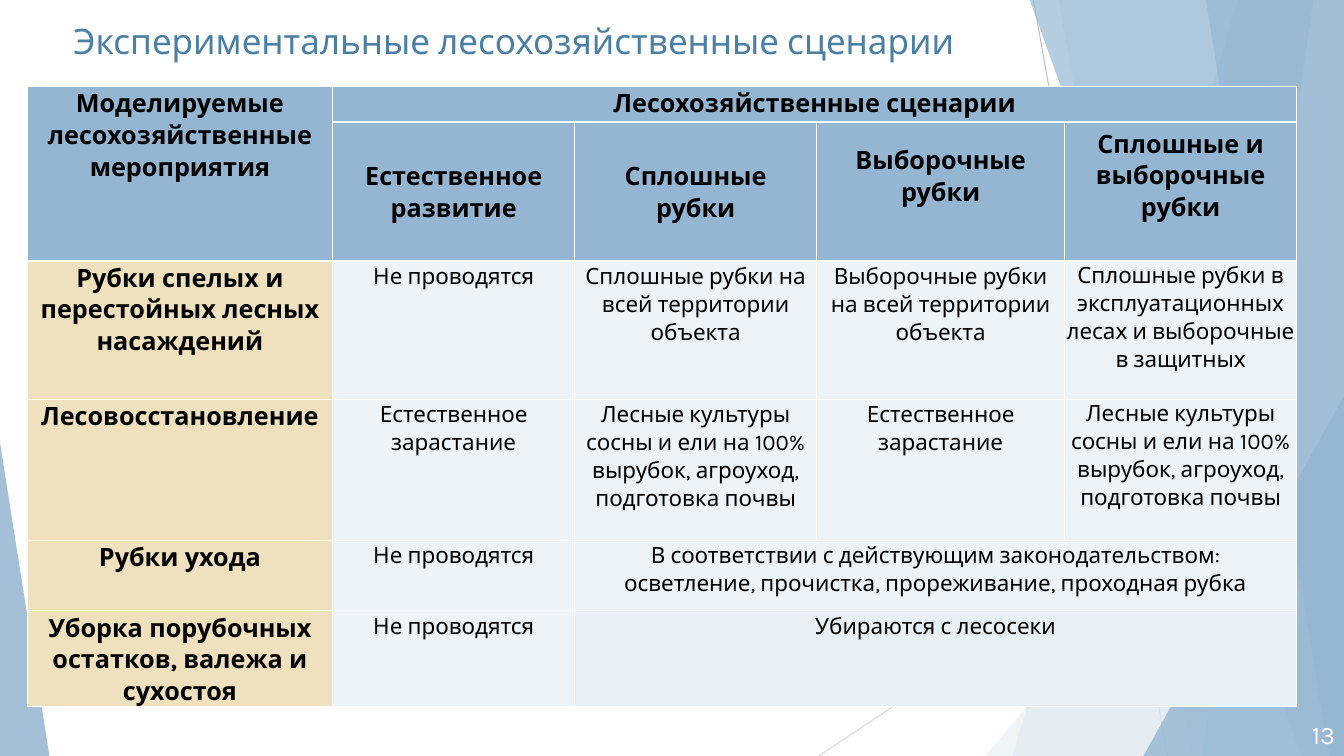
from lxml.etree import SubElement
from pptx import Presentation
from pptx.dml.color import RGBColor
from pptx.enum.shapes import MSO_CONNECTOR, MSO_SHAPE
from pptx.enum.text import MSO_ANCHOR, PP_ALIGN
from pptx.oxml.ns import qn
from pptx.util import Inches, Pt

WIDTH, HEIGHT = 13.33, 7.5
FONT = "Karla"
COLORS = {
    "blue": "94B6D2", "steel": "97B8D0", "sky": "BFD3E4", "ice": "E9F0F5",
    "body": "EEF3F7", "sand": "EFE0BE", "title": "4B7FA4",
    "black": "000000", "white": "FFFFFF", "gray": "BFBFBF", "silver": "D9D9D9",
}

COLUMN_WIDTHS = [3.03, 2.4, 2.4, 2.46, 2.3]
ROW_HEIGHTS = [0.35, 1.38, 1.37, 1.4, 0.7, 0.83]
CULTURES = "Лесные культуры сосны и ели на 100% вырубок, агроуход, подготовка почвы"
ROWS = [
    ["Моделируемые лесохозяйственные мероприятия", "Лесохозяйственные сценарии"],
    ["", "Естественное развитие", "Сплошные\nрубки", "Выборочные рубки",
     "Сплошные и выборочные рубки"],
    ["Рубки спелых и перестойных лесных насаждений", "Не проводятся",
     "Сплошные рубки на всей территории объекта",
     "Выборочные рубки на всей территории объекта",
     "Сплошные рубки в эксплуатационных лесах и выборочные в защитных"],
    ["Лесовосстановление", "Естественное зарастание", CULTURES,
     "Естественное зарастание", CULTURES],
    ["Рубки ухода", "Не проводятся",
     "В соответствии с действующим законодательством:\n"
     "осветление, прочистка, прореживание, проходная рубка"],
    ["Уборка порубочных остатков, валежа и сухостоя", "Не проводятся",
     "Убираются с лесосеки"],
]
# First and last cell of each merged block, as (row, column)
MERGES = [((0, 0), (1, 0)), ((0, 1), (0, 4)), ((4, 2), (4, 4)), ((5, 2), (5, 4))]


def rgb(name):
    return RGBColor.from_string(COLORS[name])


def paint(shape, color, opacity):
    shape.shadow.inherit = False
    shape.fill.solid()
    shape.fill.fore_color.rgb = rgb(color)
    shape.line.fill.background()
    fill_color = shape._element.spPr.find(qn("a:solidFill"))[0]
    SubElement(fill_color, qn("a:alpha"), val=str(opacity * 1000))


def add_line(slide, start, end, color):
    points = [Inches(value) for value in (*start, *end)]
    line = slide.shapes.add_connector(MSO_CONNECTOR.STRAIGHT, *points)
    line.line.color.rgb = rgb(color)
    line.line.width = Pt(0.75)
    SubElement(line._element.spPr, qn("a:effectLst"))


def add_band(slide, top_x, bottom_x, color, opacity):
    """Band from a slanted left edge to the right edge of the slide."""
    corners = [(WIDTH, -0.01), (WIDTH, HEIGHT), (bottom_x, HEIGHT)]
    builder = slide.shapes.build_freeform(Inches(top_x), Inches(-0.01))
    builder.add_line_segments([(Inches(x), Inches(y)) for x, y in corners])
    paint(builder.convert_to_shape(), color, opacity)


def add_triangle(slide, left, top, width, apex, color, opacity):
    """Triangle that stands on the bottom edge of the slide."""
    shape = slide.shapes.add_shape(
        MSO_SHAPE.ISOSCELES_TRIANGLE,
        Inches(left), Inches(top), Inches(width), Inches(HEIGHT - top))
    shape.adjustments[0] = apex
    paint(shape, color, opacity)


def format_text(text_frame, size, color, alignment, bold=False, spacing=None):
    for paragraph in text_frame.paragraphs:
        paragraph.alignment = alignment
        paragraph.line_spacing = spacing
        for run in paragraph.runs:
            run.font.name = FONT
            run.font.size = Pt(size)
            run.font.bold = bold
            run.font.color.rgb = rgb(color)


def add_text(slide, text, box, size, color, alignment, anchor):
    text_box = slide.shapes.add_textbox(*[Inches(value) for value in box])
    text_frame = text_box.text_frame
    text_frame.word_wrap = True
    text_frame.vertical_anchor = anchor
    text_frame.text = text
    format_text(text_frame, size, color, alignment)


def add_borders(cell):
    properties = cell._tc.get_or_add_tcPr()
    for side in ("lnL", "lnR", "lnT", "lnB"):
        border = SubElement(properties, qn(f"a:{side}"), w=str(Pt(1)))
        fill = SubElement(border, qn("a:solidFill"))
        SubElement(fill, qn("a:srgbClr"), val=COLORS["white"])


def cell_color(row, column):
    if row < 2:
        return "blue"
    if column == 0:
        return "sand"
    return "ice" if row == 5 and column > 1 else "body"


def format_cell(cell, row, column):
    side = 0 if column == 4 else 0.07
    cell.margin_left = cell.margin_right = Inches(side)
    cell.margin_top = Inches(0 if column == 4 else 0.01)
    # The two right-hand headings sit one text line above the middle
    raised = row == 1 and column > 2
    cell.margin_bottom = Inches(0.32 if raised else 0)
    cell.vertical_anchor = MSO_ANCHOR.MIDDLE if row == 1 else MSO_ANCHOR.TOP
    add_borders(cell)
    cell.fill.solid()
    cell.fill.fore_color.rgb = rgb(cell_color(row, column))
    heading = row < 2 or column == 0
    format_text(cell.text_frame, 18 if heading else 16, "black",
                PP_ALIGN.CENTER, heading, 1.07)


def add_scenario_table(slide):
    frame = slide.shapes.add_table(
        len(ROW_HEIGHTS), len(COLUMN_WIDTHS), Inches(0.27), Inches(0.86),
        Inches(sum(COLUMN_WIDTHS)), Inches(sum(ROW_HEIGHTS)))
    table = frame.table
    for column, width in zip(table.columns, COLUMN_WIDTHS):
        column.width = Inches(width)
    for row, height in zip(table.rows, ROW_HEIGHTS):
        row.height = Inches(height)
    for first, last in MERGES:
        table.cell(*first).merge(table.cell(*last))
    for row, texts in enumerate(ROWS):
        for column in range(len(COLUMN_WIDTHS)):
            cell = table.cell(row, column)
            if column < len(texts) and texts[column]:
                cell.text_frame.text = texts[column]
            format_cell(cell, row, column)


def add_background(slide):
    add_line(slide, (10.25, 0), (11.58, HEIGHT), "gray")
    add_line(slide, (WIDTH, 4.03), (8.12, HEIGHT), "silver")
    add_band(slide, 12.28, 10.04, "blue", 30)
    add_band(slide, 10.5, 11.82, "blue", 20)
    add_triangle(slide, 9.77, 3.33, 3.56, 1, "ice", 72)
    add_band(slide, 10.21, 12.91, "steel", 70)
    add_band(slide, 13.03, 11.92, "sky", 70)
    add_band(slide, 11.96, 13.18, "blue", 65)
    add_triangle(slide, 11.34, 3.93, 1.99, 1, "blue", 80)
    add_triangle(slide, 0, 4.39, 0.49, 0, "blue", 85)


def main():
    presentation = Presentation()
    presentation.slide_width = Inches(WIDTH)
    presentation.slide_height = Inches(HEIGHT)
    slide = presentation.slides.add_slide(presentation.slide_layouts[6])

    add_background(slide)
    add_scenario_table(slide)

    # Slide number and title
    add_text(slide, "13", (12.59, 7.09, 0.75, 0.4), 18, "white",
             PP_ALIGN.RIGHT, MSO_ANCHOR.MIDDLE)
    add_text(slide, "Экспериментальные лесохозяйственные сценарии",
             (0.63, 0.14, 10.3, 0.72), 25, "title", PP_ALIGN.LEFT, MSO_ANCHOR.TOP)

    presentation.save("out.pptx")


if __name__ == "__main__":
    main()
